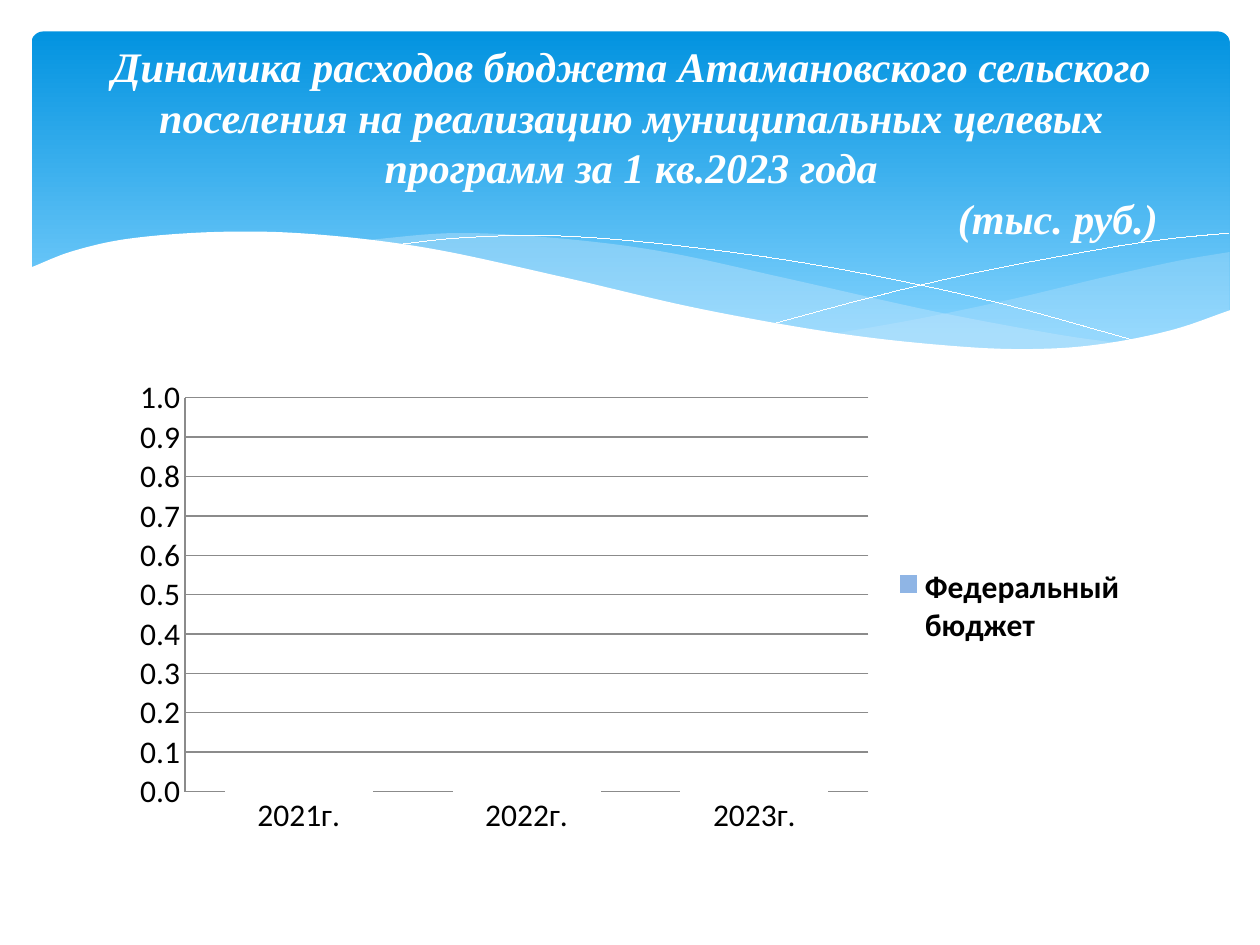
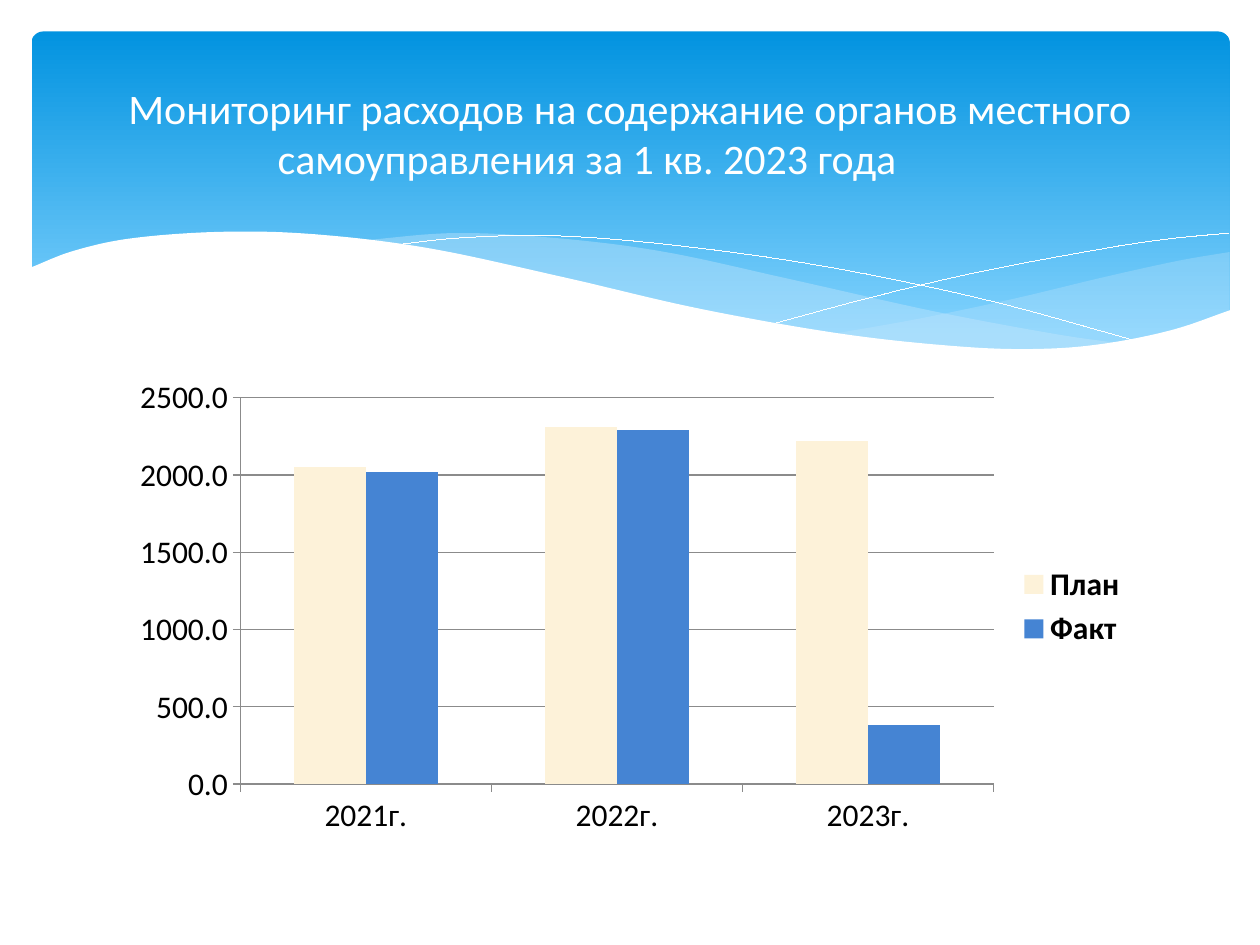
from dataclasses import dataclass, field
from typing import Any

from pptx import Presentation
from pptx import util as u
from pptx.chart.data import CategoryChartData
from pptx.dml.color import RGBColor
from pptx.enum import chart as ch, shapes, text
from pptx.oxml import ns, xmlchemy

Points = list[tuple[float, float]]


@dataclass(frozen=True)
class Theme:
    sky_top: str = "0293E0"
    sky_bottom: str = "83D3FE"
    mist: str = "C6E7FC"
    white: str = "FFFFFF"
    black: str = "000000"
    axis: str = "8B8B8B"
    body_font: str = "Calibri"
    serif_font: str = "Times New Roman"
    title_size: u.Pt = u.Pt(24)
    chart_size: u.Pt = u.Pt(18)
    axis_width: u.Pt = u.Pt(0.75)
    hairline: u.Emu = u.Emu(1)


THEME = Theme()


@dataclass(frozen=True)
class Wave:
    """A filled area between two smooth edges, each given by a few knots."""
    upper: Points
    lower: Points
    fill: str
    opacity: int = 100


@dataclass(frozen=True)
class TitleLine:
    text: str
    align: text.PP_ALIGN = text.PP_ALIGN.CENTER
    right_indent: float = 0


@dataclass(frozen=True)
class Title:
    box: tuple[float, float, float, float]
    lines: list[TitleLine]
    side_margin: float = 0.1
    font: dict[str, Any] = field(default_factory=dict)


@dataclass(frozen=True)
class Series:
    name: str
    values: tuple[float, ...]
    color: str


@dataclass(frozen=True)
class ColumnChart:
    kind: ch.XL_CHART_TYPE
    series: list[Series]
    plot: dict[str, int]
    value_max: float
    value_step: float
    number_format: str
    tick: ch.XL_TICK_MARK
    hidden_legend: tuple[int, ...] = ()
    outline: str | None = None


YEARS = ("2021г.", "2022г.", "2023г.")
BAND_BOX = (0.25, 0.25, 9.51, 2.7)
CHART_BOX = (0.95, 2.93, 8.1, 3.77)
STEPS_PER_SPAN = 12

RIGHT_WAVE = Wave(
    upper=[(6.61, 2.65), (7.29, 2.53), (8.05, 2.37), (8.76, 2.2), (9.35, 2.07), (9.76, 2)],
    lower=[(6.61, 2.65), (7.45, 2.75), (8.14, 2.78), (8.81, 2.73), (9.35, 2.62), (9.76, 2.47)],
    fill=THEME.mist, opacity=29)
MIDDLE_WAVE = Wave(
    upper=[(2.86, 1.91), (3.61, 1.85), (4.42, 1.89), (5.28, 2), (6.29, 2.22), (7.41, 2.47),
           (8.37, 2.65), (8.93, 2.73)],
    lower=[(2.86, 1.91), (3.62, 2.03), (4.49, 2.22), (5.66, 2.48), (6.5, 2.64), (7.36, 2.75),
           (8.18, 2.78), (8.93, 2.73)],
    fill=THEME.mist, opacity=40)
PAGE_WAVE = Wave(
    upper=[(0.23, 2.13), (0.59, 1.99), (1.06, 1.89), (1.77, 1.84), (2.5, 1.86), (3.4, 1.97),
           (4.47, 2.2), (5.55, 2.45), (6.68, 2.65), (7.61, 2.75), (8.23, 2.77), (8.75, 2.73),
           (9.3, 2.62), (9.77, 2.46)],
    lower=[(0.23, 3.29), (9.77, 3.29)],
    fill=THEME.white)
FALLING_LINE: Points = [(3.09, 1.95), (3.63, 1.89), (4.33, 1.87), (5.1, 1.92), (6.08, 2.04),
                        (6.95, 2.19), (7.95, 2.41), (9.07, 2.72)]
RISING_LINE: Points = [(6.13, 2.57), (6.95, 2.35), (7.76, 2.16), (8.66, 1.99), (9.24, 1.9),
                       (9.75, 1.85)]

SLIDES = [
    (
        Title(
            (0.51, 0.36, 9, 1.53),
            [TitleLine("Динамика расходов бюджета Атамановского сельского поселения на "
                       "реализацию муниципальных целевых программ за 1 кв.2023 года"),
             TitleLine("(тыс. руб.)", text.PP_ALIGN.RIGHT)],
            side_margin=0.32,
            font={"name": THEME.serif_font, "bold": True, "italic": True}),
        ColumnChart(
            ch.XL_CHART_TYPE.COLUMN_STACKED,
            [Series("Series 1", (0, 0, 0), "92D050"),
             Series("Series 2", (0, 0, 0), "00B0F0"),
             Series("Федеральный бюджет", (0, 0, 0), "8FB5E5")],
            {"gap_width": 55, "overlap": 100},
            value_max=1, value_step=0.1, number_format="#,##0.0",
            tick=ch.XL_TICK_MARK.NONE, hidden_legend=(0, 1), outline=THEME.white),
    ),
    (
        Title(
            (0.5, 0.37, 9, 1.37),
            [TitleLine("Мониторинг расходов на содержание органов местного"),
             TitleLine("самоуправления за 1 кв. 2023 года", right_indent=0.68)],
            font={"name": THEME.body_font}),
        ColumnChart(
            ch.XL_CHART_TYPE.COLUMN_CLUSTERED,
            [Series("План", (2050, 2310, 2220), "FDF2D9"),
             Series("Факт", (2020, 2290, 380), "4584D3")],
            {"gap_width": 150, "overlap": 0},
            value_max=2500, value_step=500, number_format="0.0",
            tick=ch.XL_TICK_MARK.OUTSIDE),
    ),
]


def set_attrs(target: Any, values: dict[str, Any]) -> None:
    for name, value in values.items():
        setattr(target, name, value)


def paint(fill: Any, color: str) -> None:
    fill.solid()
    fill.fore_color.rgb = RGBColor.from_string(color)


def xml_node(tag: str, value: int) -> Any:
    node = xmlchemy.OxmlElement(tag)
    node.set("val", str(value))
    return node


def smooth(knots: Points) -> Points:
    """Return points on a Catmull-Rom curve through the knots."""
    if len(knots) < 3:
        return knots

    def mirror(end: tuple[float, float], inner: tuple[float, float]) -> tuple[float, float]:
        return 2 * end[0] - inner[0], 2 * end[1] - inner[1]

    def blend(a: float, b: float, c: float, d: float, t: float) -> float:
        return b + t / 2 * (c - a + t * (2 * a - 5 * b + 4 * c - d
                                         + t * (3 * (b - c) + d - a)))

    padded = [mirror(knots[0], knots[1]), *knots, mirror(knots[-1], knots[-2])]
    curve = []
    for span in zip(padded, padded[1:], padded[2:], padded[3:]):
        xs, ys = zip(*span)
        for step in range(STEPS_PER_SPAN):
            t = step / STEPS_PER_SPAN
            curve.append((blend(*xs, t), blend(*ys, t)))
    return [*curve, knots[-1]]


def add_outline(s: Any, points: Points, close: bool) -> Any:
    start, *rest = [(u.Inches(x), u.Inches(y)) for x, y in points]
    builder = s.shapes.build_freeform(*start)
    builder.add_line_segments(rest, close=close)
    sp = builder.convert_to_shape()
    sp.shadow.inherit = False
    return sp


def draw_wave(s: Any, wave: Wave) -> None:
    sp = add_outline(s, smooth(wave.upper) + smooth(wave.lower)[::-1], close=True)
    sp.line.fill.background()
    paint(sp.fill, wave.fill)
    if wave.opacity < 100:
        color = sp.fill._xPr.find(".//" + ns.qn("a:srgbClr"))
        color.append(xml_node("a:alpha", wave.opacity * 1000))


def draw_hairline(s: Any, knots: Points) -> None:
    sp = add_outline(s, smooth(knots), close=False)
    sp.fill.background()
    paint(sp.line.fill, THEME.white)
    sp.line.width = THEME.hairline


def draw_band(s: Any) -> None:
    sp = s.shapes.add_shape(shapes.MSO_SHAPE.ROUNDED_RECTANGLE, *map(u.Inches, BAND_BOX))
    sp.adjustments[0] = 0.034
    sp.shadow.inherit = False
    sp.line.fill.background()
    sp.fill.gradient()
    sp.fill.gradient_angle = 270
    stops = ((0, THEME.sky_top), (0.9, THEME.sky_bottom))
    for stop, (position, color) in zip(sp.fill.gradient_stops, stops):
        stop.position = position
        stop.color.rgb = RGBColor.from_string(color)


def draw_header(s: Any) -> None:
    """Draw the sky band and the waves that close it, from back to front."""
    draw_band(s)
    for wave in (RIGHT_WAVE, MIDDLE_WAVE):
        draw_wave(s, wave)
    for knots in (FALLING_LINE, RISING_LINE):
        draw_hairline(s, knots)
    draw_wave(s, PAGE_WAVE)


def draw_title(s: Any, title: Title) -> None:
    tf = s.shapes.add_textbox(*map(u.Inches, title.box)).text_frame
    margin = u.Inches(title.side_margin)
    set_attrs(tf, {"word_wrap": True, "vertical_anchor": text.MSO_ANCHOR.MIDDLE,
                   "margin_left": margin, "margin_right": margin})
    for i, line in enumerate(title.lines):
        p = tf.add_paragraph() if i else tf.paragraphs[0]
        p.alignment = line.align
        if line.right_indent:
            p._p.get_or_add_pPr().set("marR", str(u.Inches(line.right_indent)))
        r = p.add_run()
        r.text = line.text
        set_attrs(r.font, {"size": THEME.title_size, **title.font})
        r.font.color.rgb = RGBColor.from_string(THEME.white)


def style_line(line: Any) -> None:
    paint(line.fill, THEME.axis)
    line.width = THEME.axis_width


def style_axes(chart: Any, model: ColumnChart) -> None:
    for axis in (chart.category_axis, chart.value_axis):
        set_attrs(axis, {"major_tick_mark": model.tick,
                         "minor_tick_mark": ch.XL_TICK_MARK.NONE})
        style_line(axis.format.line)
    values = chart.value_axis
    set_attrs(values, {"has_major_gridlines": True, "minimum_scale": 0,
                       "maximum_scale": model.value_max, "major_unit": model.value_step})
    set_attrs(values.tick_labels, {"number_format": model.number_format,
                                   "number_format_is_linked": False})
    style_line(values.major_gridlines.format.line)


def style_legend(chart: Any, hidden: tuple[int, ...]) -> None:
    chart.has_legend = True
    legend = chart.legend
    set_attrs(legend, {"position": ch.XL_LEGEND_POSITION.RIGHT, "include_in_layout": False})
    set_attrs(legend.font, {"bold": True, "size": THEME.chart_size, "name": THEME.body_font})
    for place, index in enumerate(hidden, start=1):
        entry = xmlchemy.OxmlElement("c:legendEntry")
        entry.extend([xml_node("c:idx", index), xml_node("c:delete", 1)])
        legend._element.insert(place, entry)


def draw_chart(s: Any, model: ColumnChart) -> None:
    data = CategoryChartData()
    data.categories = YEARS
    for item in model.series:
        data.add_series(item.name, item.values)
    chart = s.shapes.add_chart(model.kind, *map(u.Inches, CHART_BOX), data).chart
    chart.has_title = False
    set_attrs(chart.font, {"name": THEME.body_font, "size": THEME.chart_size})
    chart.font.color.rgb = RGBColor.from_string(THEME.black)

    plot = chart.plots[0]
    set_attrs(plot, {"vary_by_categories": False, **model.plot})
    for series, item in zip(plot.series, model.series):
        series.invert_if_negative = False
        paint(series.format.fill, item.color)
        if model.outline:
            paint(series.format.line.fill, model.outline)
    style_axes(chart, model)
    style_legend(chart, model.hidden_legend)


def main() -> None:
    prs = Presentation()
    set_attrs(prs, {"slide_width": u.Inches(10), "slide_height": u.Inches(7.5)})
    for title, chart in SLIDES:
        s = prs.slides.add_slide(prs.slide_layouts[6])
        draw_header(s)
        draw_chart(s, chart)
        draw_title(s, title)
    prs.save("out.pptx")


if __name__ == "__main__":
    main()
